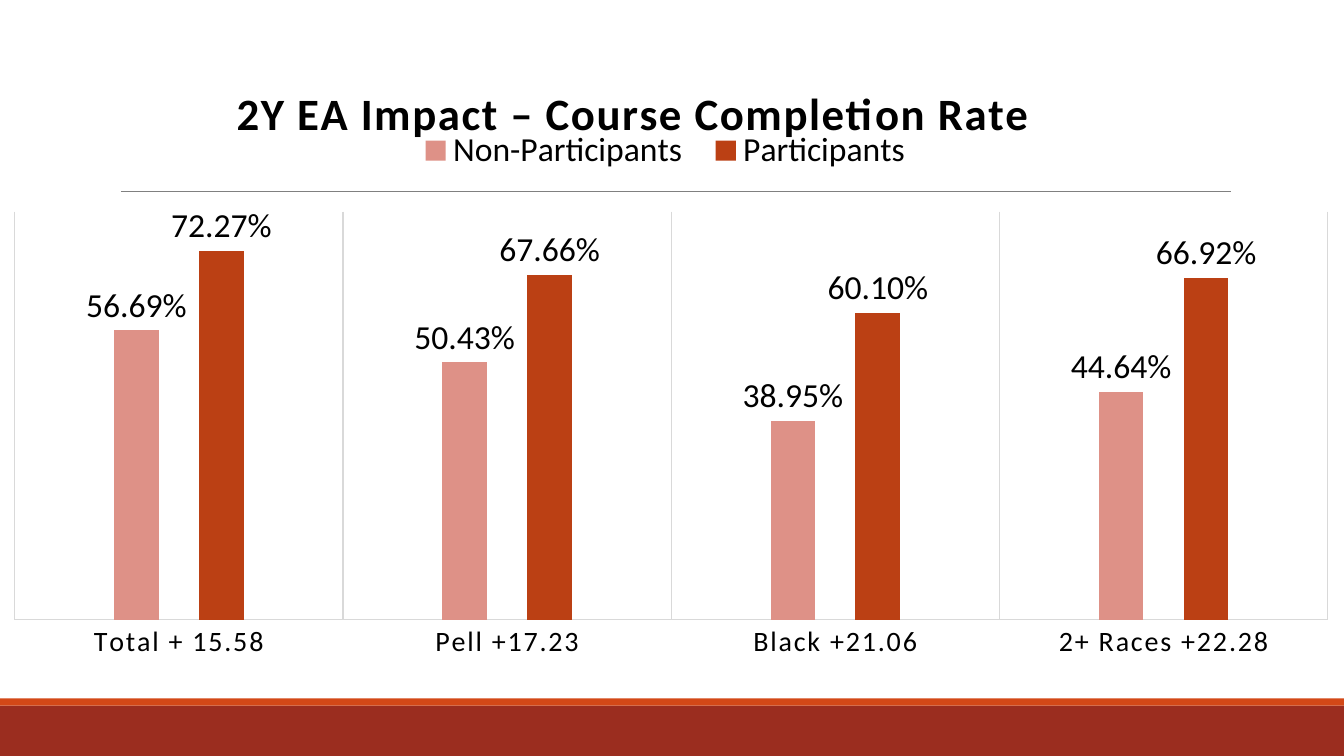
from lxml.etree import SubElement
from pptx import Presentation
from pptx.chart.data import CategoryChartData
from pptx.dml.color import RGBColor
from pptx.enum.chart import (XL_CHART_TYPE, XL_LABEL_POSITION,
                             XL_LEGEND_POSITION, XL_TICK_MARK)
from pptx.enum.shapes import MSO_CONNECTOR, MSO_SHAPE
from pptx.oxml.ns import qn
from pptx.util import Inches, Pt

# Content
TITLE = "2Y EA Impact – Course Completion Rate"
CATS = ["Total + 15.58", "Pell +17.23", "Black +21.06", "2+ Races +22.28"]
SERIES = [
    ("Non-Participants", "DE9187", [0.5669, 0.5043, 0.3895, 0.4464]),
    ("Participants", "BB4014", [0.7227, 0.6766, 0.601, 0.6692]),
]
BANDS = [(7, 0.5, "9B2D1F"), (6.93, 0.07, "D34817")]
WIDE, HIGH = 13.33, 7.5
FONT, RATE = "Calibri", "0.00%"


def color(text):
    return RGBColor.from_string(text)


def style(font, size, bold=False):
    font.name, font.size, font.bold = FONT, Pt(size), bold
    font.color.rgb = color("000000")


def rule(line, shade, width):
    line.color.rgb = color(shade)
    line.width = Pt(width)


def layout(x, y, w=None, h=None, inner=False):
    """Manual chart layout, in fractions of the chart's size."""
    root = SubElement(SubElement(chart.element, qn("c:layout")),
                      qn("c:manualLayout"))
    parts = [("layoutTarget", "inner")] if inner else []
    parts += [("xMode", "edge"), ("yMode", "edge"), ("x", x), ("y", y)]
    if w:
        parts += [("w", w), ("h", h)]
    for tag, val in parts:
        SubElement(root, qn("c:" + tag)).set("val", str(val))
    return root.getparent()


def place(node, *box):
    for old in node.findall(qn("c:layout")):
        node.remove(old)
    node.find(qn("c:overlay")).addprevious(layout(*box))


deck = Presentation()
deck.slide_width, deck.slide_height = Inches(WIDE), Inches(HIGH)
slide = deck.slides.add_slide(deck.slide_layouts[6])
shapes = slide.shapes

# Footer bands
for top, high, fill in BANDS:
    band = shapes.add_shape(MSO_SHAPE.RECTANGLE, 0, Inches(top),
                            Inches(WIDE), Inches(high))
    band.shadow.inherit = False
    band.fill.solid()
    band.fill.fore_color.rgb = color(fill)
    band.line.fill.background()

# Header line
line = shapes.add_connector(MSO_CONNECTOR.STRAIGHT, Inches(1.2), Inches(1.9),
                            Inches(12.21), Inches(1.9))
rule(line.line, "808080", 0.5)
SubElement(line.element.spPr, qn("a:effectLst"))

# Chart
data = CategoryChartData(number_format=RATE)
data.categories = CATS
for name, _, vals in SERIES:
    data.add_series(name, vals)
chart = shapes.add_chart(XL_CHART_TYPE.COLUMN_CLUSTERED, 0, 0, Inches(WIDE),
                         Inches(6.95), data).chart
style(chart.font, 24)

# Chart title
chart.has_title = True
run = chart.chart_title.text_frame.paragraphs[0].add_run()
run.text = TITLE
style(run.font, 32, True)
run.font._element.set("spc", "100")
place(chart.chart_title._element, 0.17, 0.105)

# Legend
chart.has_legend = True
legend = chart.legend
legend.position = XL_LEGEND_POSITION.TOP
legend.include_in_layout = False
style(legend.font, 24)
place(legend._element, 0.3, 0.175, 0.39, 0.08)

# Axes
cat = chart.category_axis
cat.major_tick_mark = cat.minor_tick_mark = XL_TICK_MARK.NONE
style(cat.tick_labels.font, 20)
cat.tick_labels.font._element.set("spc", "120")
cat.has_major_gridlines = True
for edge in (cat.format.line, cat.major_gridlines.format.line):
    rule(edge, "D9D9D9", 0.75)
val = chart.value_axis
val.minimum_scale, val.maximum_scale = 0, 0.8
val.has_major_gridlines = False
val.tick_labels.number_format = RATE
val.tick_labels.number_format_is_linked = False
val.visible = False

# Columns and their labels
plot = chart.plots[0]
plot.gap_width, plot.overlap = 444, -90
plot.vary_by_categories = False
for bar, (_, fill, _) in zip(plot.series, SERIES):
    bar.format.fill.solid()
    bar.format.fill.fore_color.rgb = color(fill)
    bar.invert_if_negative = False
    tags = bar.data_labels
    tags.show_value = True
    tags.position = XL_LABEL_POSITION.OUTSIDE_END
    tags.number_format, tags.number_format_is_linked = RATE, False
    style(tags.font, 24)

# Plot area
area = chart.element.find(".//" + qn("c:plotArea"))
for old in area.findall(qn("c:layout")):
    area.remove(old)
area.insert(0, layout(0.011, 0.302, 0.977, 0.583, inner=True))

deck.save("out.pptx")
